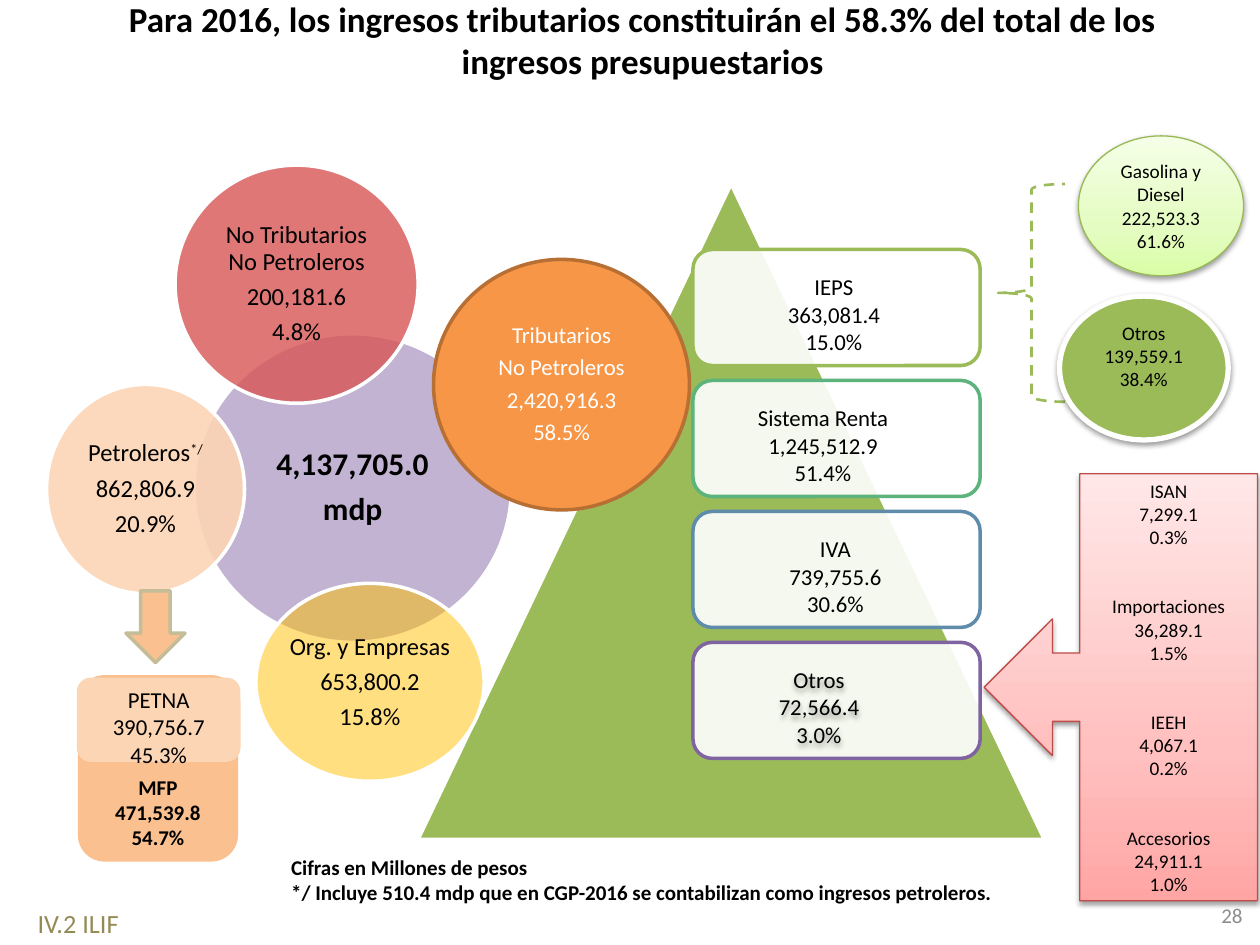
from copy import deepcopy

from lxml import etree
from pptx import Presentation
from pptx.dml.color import RGBColor
from pptx.enum.dml import MSO_LINE
from pptx.enum.shapes import MSO_SHAPE
from pptx.enum.text import MSO_ANCHOR, PP_ALIGN
from pptx.oxml import parse_xml
from pptx.oxml.ns import nsdecls, qn
from pptx.util import Cm, Pt

OVAL = MSO_SHAPE.OVAL
ROUNDED = MSO_SHAPE.ROUNDED_RECTANGLE
MIDDLE, BOTTOM, TOP = MSO_ANCHOR.MIDDLE, MSO_ANCHOR.BOTTOM, MSO_ANCHOR.TOP
CENTER, LEFT, RIGHT = PP_ALIGN.CENTER, PP_ALIGN.LEFT, PP_ALIGN.RIGHT
FONT = "Calibri"
BLACK, WHITE, GREEN, PEACH = "000000", "FFFFFF", "9BBB59", "FAC090"
GRADIENT_POSITIONS = (0, 0.35, 1)


def color(hex_string):
    return RGBColor.from_string(hex_string)


def add_shadow(shape):
    effects = shape._element.spPr.find(qn("a:effectLst"))
    effects.append(parse_xml(
        f'<a:outerShdw {nsdecls("a")} blurRad="40000" dist="20000" dir="5400000" rotWithShape="0">'
        '<a:srgbClr val="000000"><a:alpha val="38000"/></a:srgbClr></a:outerShdw>'))


def set_gradient(shape, colors):
    """Fill with three colours that run from the bottom to the top."""
    fill = shape.fill
    fill.gradient()
    fill.gradient_angle = 90
    first_stop = shape._element.spPr.find(qn("a:gradFill")).find(qn("a:gsLst"))[0]
    first_stop.addnext(deepcopy(first_stop))
    for stop, position, hex_string in zip(fill.gradient_stops, GRADIENT_POSITIONS, colors):
        stop.position = position
        stop.color.rgb = color(hex_string)


def add_box(slide, kind, box, fill=None, line=None, line_width=2, opacity=100, shadow=False):
    """Add a shape; fill is a hex string, or a tuple of three for a gradient."""
    shape = slide.shapes.add_shape(kind, *map(Cm, box))
    shape.shadow.inherit = False
    if shadow:
        add_shadow(shape)
    if fill is None:
        shape.fill.background()
    elif isinstance(fill, tuple):
        set_gradient(shape, fill)
    else:
        shape.fill.solid()
        shape.fill.fore_color.rgb = color(fill)
    if opacity < 100:
        for srgb in shape._element.spPr.find(qn("a:solidFill")):
            etree.SubElement(srgb, qn("a:alpha")).set("val", str(opacity * 1000))
    if line:
        shape.line.color.rgb = color(line)
        shape.line.width = Pt(line_width)
    else:
        shape.line.fill.background()
    return shape


def write(shape, text, size, hex_string=BLACK, bold=False, align=CENTER,
          anchor=MIDDLE, margins=(0, 0, 0, 0), wrap=True):
    frame = shape.text_frame
    frame.text = text
    frame.word_wrap = wrap
    frame.vertical_anchor = anchor
    (frame.margin_left, frame.margin_top,
     frame.margin_right, frame.margin_bottom) = map(Cm, margins)
    for paragraph in frame.paragraphs:
        paragraph.alignment = align
        font = paragraph.font
        font.size, font.bold, font.name = Pt(size), bold, FONT
        for run in paragraph.runs:
            run.font.size, run.font.bold, run.font.name = Pt(size), bold, FONT
            run.font.color.rgb = color(hex_string)
    return frame.paragraphs


def add_text(slide, box, text, size, **style):
    shape = slide.shapes.add_textbox(*map(Cm, box))
    write(shape, text, size, **style)
    return shape


def add_tax_pyramid(slide, box):
    left, top, width, height = box
    add_box(slide, MSO_SHAPE.ISOSCELES_TRIANGLE, box, GREEN, WHITE)
    card_left, card_top, card_pitch = left + 5.54, top + 1.32, 2.64
    label_width = 3.6
    cards = [("IEPS\n363,081.4\n15.0%", GREEN, 2.84),
             ("Sistema Renta\n1,245,512.9\n51.4%", "5CB37C", 2.62),
             ("IVA\n739,755.6\n30.6%", "608CAB", 2.87),
             ("Otros\n72,566.4\n3.0%", "8064A2", 2.54)]
    for row, (text, outline, label_center) in enumerate(cards):
        y = card_top + row * card_pitch
        add_box(slide, ROUNDED, (card_left, y, 5.79, 2.34), WHITE, outline, opacity=90)
        label_left = card_left + label_center - label_width / 2
        label = add_text(slide, (label_left, y + 0.13, label_width, 2.34), text, 13)
        if row == len(cards) - 1:
            label.shadow.inherit = False
            add_shadow(label)


def add_income_circles(slide, box):
    left, top = box[:2]
    circles = [
        ((2.97, 3.4, 6.4, 6.22), "4,137,705.0\nmdp", 18, "B3A2C7", 81, WHITE),
        ((4.22, 8.43, 4.6, 3.99), "Org. y Empresas\n653,800.2\n15.8%", 14, "FFC000", 50, WHITE),
        ((0, 4.42, 3.99, 4.22), "Petroleros*/\n862,806.9\n20.9%", 14, "FCD5B5", 90, WHITE),
        ((7.8, 1.9, 5.16, 5.05), "Tributarios\nNo Petroleros\n2,420,916.3\n58.5%", 13,
         "F79646", 100, "B76F34"),
        ((2.59, 0, 4.9, 4.8), "No Tributarios\vNo Petroleros\n200,181.6\n4.8%", 14,
         "D85656", 80, WHITE),
    ]
    for (x, y, width, height), text, size, fill, opacity, outline in circles:
        circle = add_box(slide, OVAL, (left + x, top + y, width, height), fill, outline,
                         opacity=opacity)
        text_color = WHITE if opacity == 100 else BLACK
        for paragraph in write(circle, text, size, text_color, bold=size == 18, wrap=False):
            paragraph.line_spacing = 0.9
            paragraph.space_after = Pt(size * 0.35)
            if paragraph.text.endswith("*/"):
                mark = paragraph.add_run()
                paragraph.runs[0].text = paragraph.runs[0].text[:-2]
                mark.text = "*/"
                mark.font.size, mark.font.name = Pt(size), FONT
                mark.font.color.rgb = color(text_color)
                mark.font._element.set("baseline", "30000")


def add_oil_breakdown(slide, box):
    left, top = box[:2]
    add_box(slide, MSO_SHAPE.DOWN_ARROW, (left + 0.99, top, 1.19, 1.45), PEACH, "C4BD97")
    lower = add_box(slide, ROUNDED, (left + 0.02, top + 1.7, 3.23, 3.76), PEACH)
    write(lower, "MFP\n471,539.8\n54.7%", 12, bold=True, anchor=BOTTOM, margins=(0, 0, 0, 0.08))
    upper = add_box(slide, ROUNDED, (left, top + 1.75, 3.3, 1.7), "FCD5B5")
    write(upper, "PETNA\n390,756.7\n45.3%", 13, margins=(0, 0.28, 0, 0))


def add_fuel_breakdown(slide, box):
    left, top = box[:2]
    brace = add_box(slide, MSO_SHAPE.LEFT_BRACE, (left, top + 0.97, 1.35, 4.39),
                    line=GREEN, line_width=1.5)
    brace.line.dash_style = MSO_LINE.DASH
    fuel = add_box(slide, OVAL, (left + 1.62, top, 3.33, 2.82),
                   ("DAFDA7", "E4FCC2", "F5FFE7"), "98B955", 0.75, shadow=True)
    write(fuel, "Gasolina y Diesel\n222,523.3\n61.6%", 11)
    other = add_box(slide, OVAL, (left + 1.24, top + 3.23, 3.4, 2.9), GREEN, WHITE, 3, shadow=True)
    write(other, "Otros\n139,559.1\n38.4%", 11, margins=(0, 0, 0, 0.5))


def add_other_taxes(slide, box):
    taxes = ["ISAN\n7,299.1\n0.3%", "Importaciones\n36,289.1\n1.5%",
             "IEEH\n4,067.1\n0.2%", "Accesorios\n24,911.1\n1.0%"]
    callout = add_box(slide, MSO_SHAPE.LEFT_ARROW_CALLOUT, box,
                      ("FFA6A5", "FFC0BF", "FFE7E7"), "BF4C48", 0.75, shadow=True)
    paragraphs = write(callout, "\n".join(taxes), 11)
    for paragraph in paragraphs[3::3]:
        paragraph.space_before = Pt(26.5)


def add_footer(slide, box):
    left, top = box[:2]
    add_text(slide, (left + 5.36, top, 17, 1.12),
             "Cifras en Millones de pesos\n*/ Incluye 510.4 mdp que en CGP-2016 se "
             "contabilizan como ingresos petroleros.", 12, bold=True, align=LEFT)
    add_text(slide, (left, top + 0.99, 3.2, 0.86), "IV.2 ILIF", 15, hex_string="948A54",
             align=LEFT, anchor=TOP, margins=(0.25, 0.13, 0.25, 0))
    add_text(slide, (left + 18.87, top + 0.76, 5.92, 1.02), "28", 12, hex_string="8C8C8C",
             align=RIGHT, margins=(0.25, 0, 0.25, 0))


def main():
    presentation = Presentation()
    presentation.slide_width, presentation.slide_height = Cm(25.4), Cm(19.05)
    slide = presentation.slides.add_slide(presentation.slide_layouts[6])
    add_tax_pyramid(slide, (8.43, 3.71, 12.62, 13.21))
    add_text(slide, (0.51, 0, 24.89, 1.6),
             "Para 2016, los ingresos tributarios constituirán el 58.3% del total de los\v"
             "ingresos presupuestarios", 20, bold=True)
    add_income_circles(slide, (0.94, 3.33, 12.96, 12.42))
    add_oil_breakdown(slide, (1.55, 11.91, 3.3, 5.46))
    add_fuel_breakdown(slide, (20.12, 2.74, 4.95, 6.13))
    add_other_taxes(slide, (19.84, 9.55, 5.51, 8.61))
    add_footer(slide, (0.51, 17.17, 24.79, 1.85))
    presentation.save("out.pptx")


if __name__ == "__main__":
    main()
